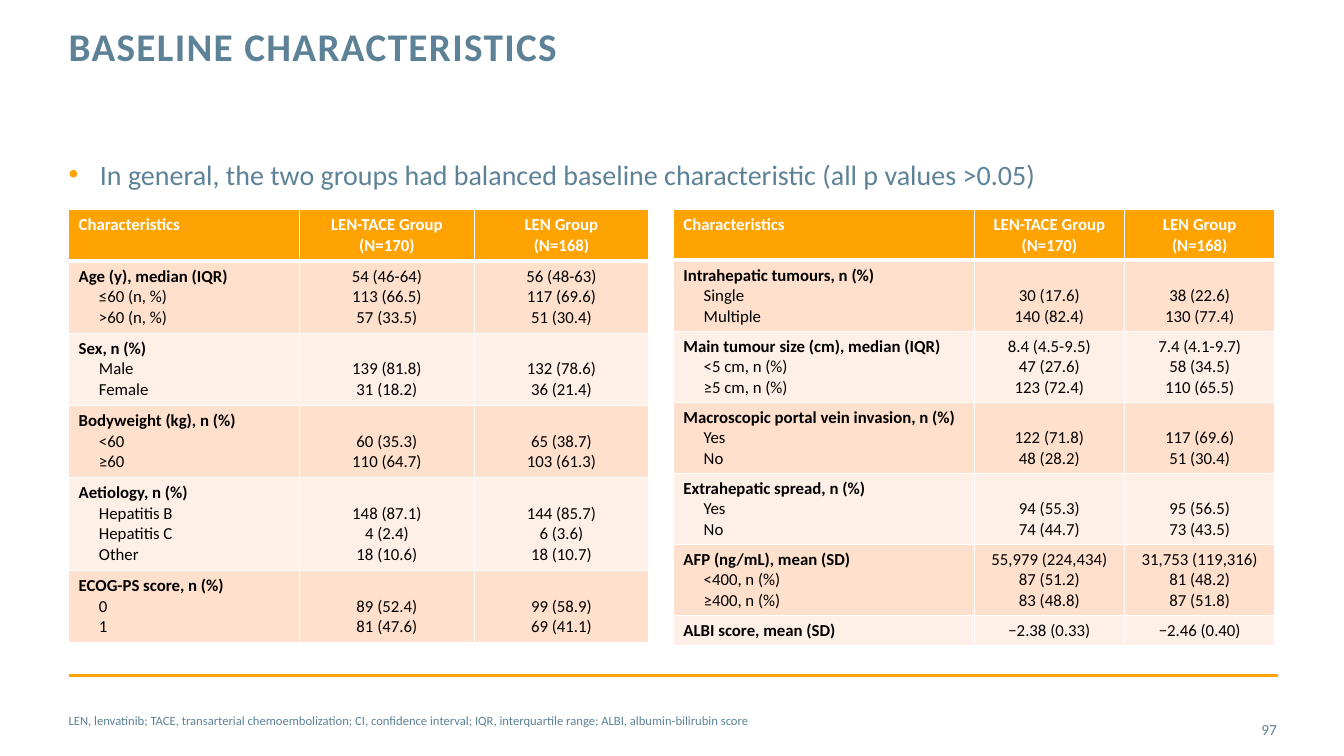
"""Build the baseline characteristics slide with its two comparison tables."""
from lxml import etree
from pptx import Presentation
from pptx import util as u
from pptx.dml import color
from pptx.enum import shapes, text
from pptx.oxml import ns

Cm, Pt = u.Cm, u.Pt
CENTER, RIGHT = text.PP_ALIGN.CENTER, text.PP_ALIGN.RIGHT
TOP, MIDDLE = text.MSO_ANCHOR.TOP, text.MSO_ANCHOR.MIDDLE


def rgb(value):
    return color.RGBColor.from_string(value)


def child(parent, tag, **attrs):
    return etree.SubElement(parent, ns.qn("a:" + tag), **attrs)


class Deck:
    font = "Calibri"
    slate, orange, white, black = "5D8298", "FEA302", "FFFFFF", "000000"
    bands = "FFE0CC", "FFF0E7"
    left = 1.73

    def __init__(self, prs):
        self.s = prs.slides.add_slide(prs.slide_layouts[6])

    def style(self, p, size, hue, bold=None):
        p.font.name, p.font.size, p.font.bold = self.font, Pt(size), bold
        p.font.color.rgb = rgb(hue)

    def indent(self, p, cm):
        pPr = p._p.get_or_add_pPr()
        pPr.set("marL", str(Cm(cm)))
        pPr.set("indent", str(Cm(-cm)))
        return pPr

    def label(self, words, x, y, w, h, size, bold=None, anchor=TOP, align=None):
        tf = self.s.shapes.add_textbox(Cm(x), Cm(y), Cm(w), Cm(h)).text_frame
        tf.word_wrap, tf.vertical_anchor = True, anchor
        tf.margin_left = tf.margin_right = tf.margin_top = tf.margin_bottom = 0
        p = tf.paragraphs[0]
        p.text, p.alignment = words, align
        self.style(p, size, self.slate, bold)
        return p

    def title(self, words):
        p = self.label(words, self.left, 0.69, 24.28, 2.24, 28, bold=True)
        p.line_spacing = Pt(30)
        p.runs[0].font._element.set("spc", "100")

    def bullet(self, words):
        p = self.label("", self.left, 3.96, 30.45, 1.17, 20)
        p._p.remove(p._p.pPr)
        pPr = self.indent(p, 0.79)
        child(child(pPr, "buClr"), "srgbClr", val=self.orange)
        child(pPr, "buFont", typeface="Arial")
        child(pPr, "buChar", char="•")
        p.text = words
        self.style(p, 20, self.slate)

    def rule(self, y):
        c = self.s.shapes.add_connector(
            shapes.MSO_CONNECTOR.STRAIGHT, Cm(self.left), Cm(y), Cm(32.2), Cm(y))
        c.line.color.rgb, c.line.width = rgb("FFA402"), Pt(2)
        child(c._element.spPr, "effectLst")

    def borders(self, cell, bottom):
        tcPr = cell._tc.get_or_add_tcPr()
        for i, side in enumerate("LRTB"):
            ln = child(tcPr, "ln" + side, w=str(Pt(bottom if side == "B" else 1)))
            child(child(ln, "solidFill"), "srgbClr", val=self.white)
            tcPr.insert(i, ln)

    def cell(self, cell, words, fill, header, first):
        cell.fill.solid()
        cell.fill.fore_color.rgb = rgb(fill)
        self.borders(cell, 3 if header else 1)
        p = cell.text_frame.paragraphs[0]
        for i, line in enumerate(words.split("\n")):
            if i:
                p.add_line_break()
            if line:
                r = p.add_run()
                r.text, r.font.bold = line, header or (first and i == 0)
        for br in p._p.findall(ns.qn("a:br")):
            child(br, "rPr", sz="1200")
        if not first:
            p.alignment = CENTER
        elif not header:
            self.indent(p, 0.51)
        self.style(p, 12, self.white if header else self.black)

    def table(self, x, widths, line_height, rows):
        heights = [0.26 + line_height * (1 + max(v.count("\n") for v in row)) for row in rows]
        t = self.s.shapes.add_table(len(rows), len(widths), Cm(x), Cm(5.28),
                                    Cm(sum(widths)), Cm(sum(heights))).table
        for col, w in zip(t.columns, widths):
            col.width = Cm(w)
        for i, row in enumerate(rows):
            t.rows[i].height = Cm(heights[i])
            fill = self.bands[(i - 1) % 2] if i else self.orange
            for j, words in enumerate(row):
                self.cell(t.cell(i, j), words, fill, i == 0, j == 0)


HEADER = ("Characteristics", "LEN-TACE Group\n(N=170)", "LEN Group\n(N=168)")
PATIENT = [
    HEADER,
    ("Age (y), median (IQR)\n≤60 (n, %)\n>60 (n, %)",
     "54 (46-64)\n113 (66.5)\n57 (33.5)", "56 (48-63)\n117 (69.6)\n51 (30.4)"),
    ("Sex, n (%)\nMale\nFemale", "\n139 (81.8)\n31 (18.2)", "\n132 (78.6)\n36 (21.4)"),
    ("Bodyweight (kg), n (%)\n<60\n≥60", "\n60 (35.3)\n110 (64.7)", "\n65 (38.7)\n103 (61.3)"),
    ("Aetiology, n (%)\nHepatitis B\nHepatitis C\nOther",
     "\n148 (87.1)\n4 (2.4)\n18 (10.6)", "\n144 (85.7)\n6 (3.6)\n18 (10.7)"),
    ("ECOG-PS score, n (%)\n0\n1", "\n89 (52.4)\n81 (47.6)", "\n99 (58.9)\n69 (41.1)"),
]
TUMOUR = [
    HEADER,
    ("Intrahepatic tumours, n (%)\nSingle\nMultiple",
     "\n30 (17.6)\n140 (82.4)", "\n38 (22.6)\n130 (77.4)"),
    ("Main tumour size (cm), median (IQR)\n<5 cm, n (%)\n≥5 cm, n (%)",
     "8.4 (4.5-9.5)\n47 (27.6)\n123 (72.4)", "7.4 (4.1-9.7)\n58 (34.5)\n110 (65.5)"),
    ("Macroscopic portal vein invasion, n (%)\nYes\nNo",
     "\n122 (71.8)\n48 (28.2)", "\n117 (69.6)\n51 (30.4)"),
    ("Extrahepatic spread, n (%)\nYes\nNo",
     "\n94 (55.3)\n74 (44.7)", "\n95 (56.5)\n73 (43.5)"),
    ("AFP (ng/mL), mean (SD)\n<400, n (%)\n≥400, n (%)",
     "55,979 (224,434)\n87 (51.2)\n83 (48.8)", "31,753 (119,316)\n81 (48.2)\n87 (51.8)"),
    ("ALBI score, mean (SD)", "−2.38 (0.33)", "−2.46 (0.40)"),
]


def main():
    prs = Presentation()
    prs.slide_width, prs.slide_height = Cm(33.87), Cm(19.05)
    deck = Deck(prs)
    deck.rule(17.02)
    deck.bullet("In general, the two groups had balanced baseline characteristic "
                "(all p values >0.05)")
    deck.title("BASELINE CHARACTERISTICS")
    deck.label("97", 30, 17.86, 2.18, 1.02, 11, anchor=MIDDLE, align=RIGHT)
    deck.label("LEN, lenvatinib; TACE, transarterial chemoembolization; CI, confidence interval; "
               "IQR, interquartile range; ALBI, albumin-bilirubin score",
               deck.left, 17.65, 29.82, 1.02, 9, anchor=MIDDLE)
    deck.table(deck.left, (5.82, 4.4, 4.4), 0.52, PATIENT)
    deck.table(16.97, (7.58, 3.79, 3.79), 0.51, TUMOUR)
    prs.save("out.pptx")


if __name__ == "__main__":
    main()
